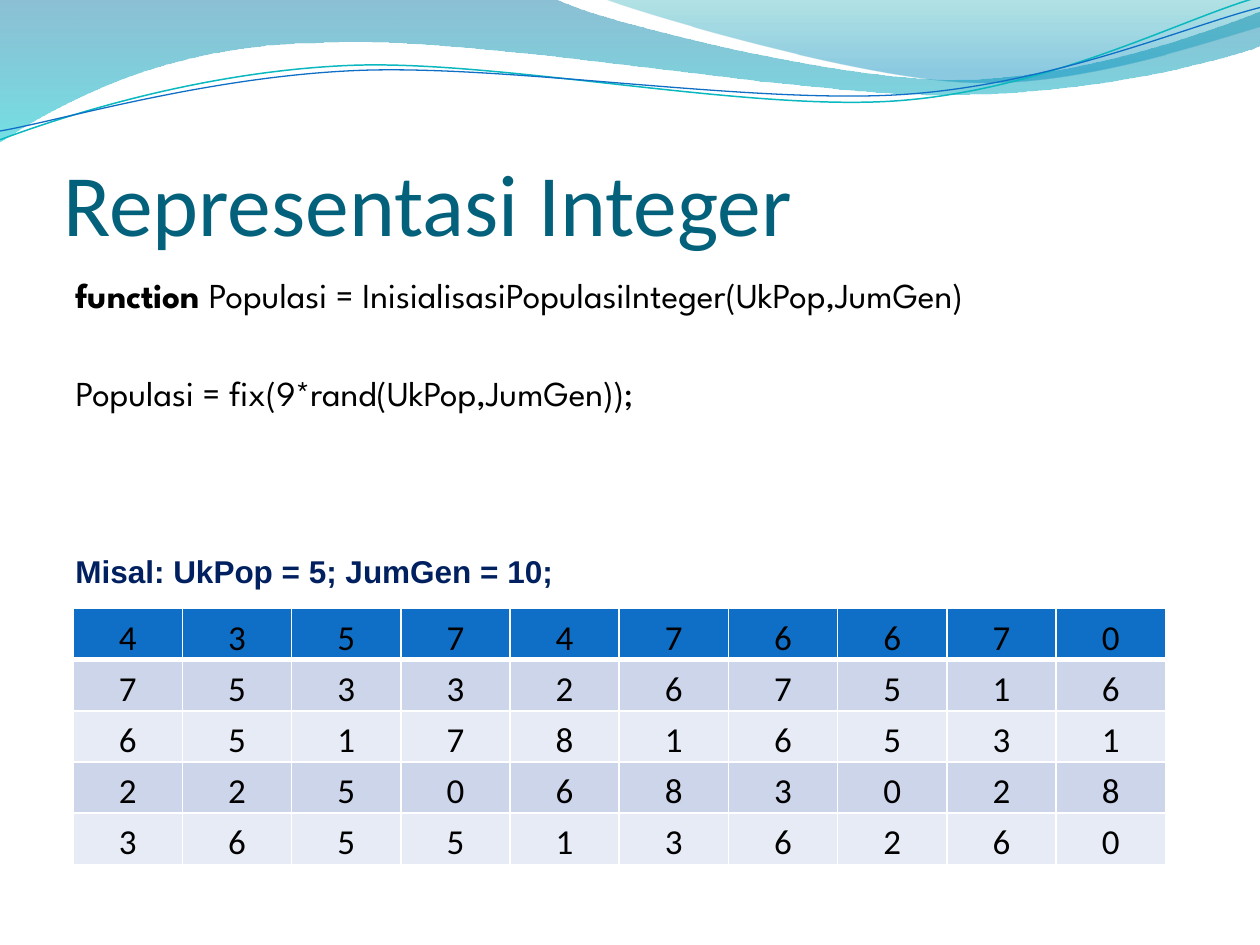
from itertools import product
from typing import NamedTuple

from lxml.etree import SubElement
from pptx import Presentation
from pptx.dml.color import RGBColor
from pptx.enum.text import MSO_ANCHOR as Anchor, MSO_AUTO_SIZE as AutoSize, PP_ALIGN as Align
from pptx.oxml import parse_xml
from pptx.oxml.ns import nsdecls, qn
from pptx.util import Inches, Pt

Point = tuple[float, float]


class Stop(NamedTuple):
    position: float
    color: str
    opacity: int


class Wave(NamedTuple):
    """A start point, then one point per straight line or three per curve."""
    start: Point
    segments: list[list[Point]]
    stops: tuple[Stop, ...] = ()
    line: str = ""
    width: float = 0


WAVES = [
    Wave((0, -0.01), [
        [(4.4, -0.01)],
        [(4.76, 0.17), (6.64, 0.63), (7.58, 0.63)],
        [(8.53, 0.63), (9.58, 0.26), (10, 0.09)],
        [(10.01, 0.36)],
        [(9.83, 0.44), (8.7, 0.76), (7.46, 0.75)],
        [(6.22, 0.75), (3.82, 0.28), (2.57, 0.34)],
        [(1.29, 0.35), (0.46, 0.83), (-0.01, 1.13)],
    ], stops=(Stop(0, "0074A1", 45), Stop(1, "00C6CF", 55))),
    Wave((4.79, -0.01), [
        [(5.09, 0.11), (6.82, 0.62), (7.69, 0.65)],
        [(8.56, 0.69), (9.61, 0.32), (10, 0.21)],
        [(10, 0)],
    ], stops=(Stop(0, "00A1A9", 30), Stop(0.8, "008BBF", 45))),
    Wave((0, 1.11), [
        [(0.48, 0.93), (1.58, 0.57), (2.77, 0.52)],
        [(3.95, 0.47), (5.93, 0.89), (7.13, 0.8)],
        [(8.33, 0.71), (9.38, 0.15), (9.98, -0.02)],
    ], line="0AB8BF", width=0.85),
    Wave((0, 1.04), [
        [(0.47, 0.96), (1.64, 0.61), (2.83, 0.56)],
        [(4.03, 0.51), (5.97, 0.83), (7.17, 0.75)],
        [(8.36, 0.67), (9.41, 0.21), (10, 0.06)],
    ], line="0F6FC6", width=0.75),
]

POPULATION = ["4357476670", "7533267516", "6517816531", "2250683028", "3655136260"]
HEADER_FILL, BAND_FILLS = "0F6FC6", ("E7EBF5", "CCD5EA")


def rgb(color: str) -> RGBColor:
    return RGBColor.from_string(color)


def set_font(font, name: str, size: float, color: str) -> None:
    font.name, font.size = name, Pt(size)
    font.color.rgb = rgb(color)


def place(shape, left: float, top: float, width: float, height: float) -> None:
    shape.left, shape.top = Inches(left), Inches(top)
    shape.width, shape.height = Inches(width), Inches(height)


def to_length(point: Point) -> tuple[int, int]:
    return Inches(point[0]), Inches(point[1])


def bend_lines(shape, segments: list[list[Point]]) -> None:
    """Join the three lines of each curved segment into one cubic curve."""
    lines = iter(list(shape.element.iter(qn("a:lnTo"))))
    for segment in segments:
        first, *others = [next(lines) for _ in segment]
        if others:
            first.addprevious(curve := parse_xml(f'<a:cubicBezTo {nsdecls("a")}/>'))
            for line in (first, *others):
                curve.append(line[0])
                line.getparent().remove(line)


def draw_wave(page, wave: Wave, depth: int) -> None:
    points = [to_length(point) for segment in wave.segments for point in segment]
    builder = page.shapes.build_freeform(*to_length(wave.start))
    builder.add_line_segments(points, close=bool(wave.stops))
    shape = builder.convert_to_shape()
    bend_lines(shape, wave.segments)
    shape.shadow.inherit = False
    if wave.stops:
        shape.line.fill.background()
        shape.fill.gradient()
        shape.fill.gradient_angle = 270
        for mark, stop in zip(shape.fill.gradient_stops, wave.stops):
            mark.position, mark.color.rgb = stop.position, rgb(stop.color)
        for node, stop in zip(shape.element.iter(qn("a:srgbClr")), wave.stops):
            SubElement(node, qn("a:alpha"), val=str(stop.opacity * 1000))
    else:
        shape.fill.background()
        shape.line.color.rgb = rgb(wave.line)
        shape.line.width = Pt(wave.width)
    # Waves lie behind the placeholders
    page.shapes.element.insert(2 + depth, shape.element)


def set_borders(cell, top: float, bottom: float) -> None:
    widths = {"lnL": 1, "lnR": 1, "lnT": top, "lnB": bottom}
    for index, (tag, width) in enumerate(widths.items()):
        cell._tc.get_or_add_tcPr().insert(index, parse_xml(
            f'<a:{tag} {nsdecls("a")} w="{Pt(width)}"><a:solidFill>'
            f'<a:srgbClr val="FFFFFF"/></a:solidFill></a:{tag}>'))


def draw_population(page, rows: list[str]) -> None:
    row_count, column_count = len(rows), len(rows[0])
    table = page.shapes.add_table(row_count, column_count, Inches(0.58), Inches(4.83),
                                  Inches(8.67), Inches(2.03)).table
    table.first_row = table.horz_banding = False
    for row, column in product(range(row_count), range(column_count)):
        cell = table.cell(row, column)
        cell.text = rows[row][column]
        cell.vertical_anchor = Anchor.BOTTOM
        cell.margin_left = cell.margin_right = cell.margin_top = Inches(0.01)
        cell.margin_bottom = 0
        cell.fill.solid()
        cell.fill.fore_color.rgb = rgb(BAND_FILLS[row % 2] if row else HEADER_FILL)
        set_borders(cell, top=3 if row == 1 else 1, bottom=3 if row == 0 else 1)
        para = cell.text_frame.paragraphs[0]
        para.alignment = Align.CENTER
        set_font(para.font, "Calibri", 20, "000000")


def write_title(title) -> None:
    place(title, 0.5, 0.77, 9, 1.25)
    frame = title.text_frame
    frame.text = "Representasi Integer"
    frame.auto_size, frame.vertical_anchor = AutoSize.NONE, Anchor.BOTTOM
    frame.margin_left = frame.margin_right = frame.margin_bottom = 0
    para = frame.paragraphs[0]
    para.alignment = Align.LEFT
    set_font(para.font, "Calibri", 50, "04617B")


def write_code(body) -> None:
    place(body, 0.5, 2.12, 9, 4.8)
    frame = body.text_frame
    frame.auto_size = AutoSize.NONE
    signature, statement = frame.paragraphs[0], frame.add_paragraph()
    keyword = signature.add_run()
    keyword.text, keyword.font.bold = "function", True
    signature.add_run().text = " Populasi = InisialisasiPopulasiInteger(UkPop,JumGen)"
    statement.text = "Populasi = fix(9*rand(UkPop,JumGen));"
    for para, gap in ((signature, 3.5), (statement, 32)):
        para.space_before = Pt(gap)
        set_font(para.font, "League Spartan", 20, "000000")
        # Hanging indent without a bullet
        properties = para._p.get_or_add_pPr()
        properties.set("marL", str(Inches(0.3)))
        properties.set("indent", str(Inches(-0.3)))
        properties.insert_element_before(
            parse_xml(f'<a:buNone {nsdecls("a")}/>'), "a:tabLst", "a:defRPr", "a:extLst")


def write_example(page) -> None:
    box = page.shapes.add_textbox(Inches(0.5), Inches(4.33), Inches(4.03), Inches(0.4))
    box.text_frame.word_wrap = False
    para = box.text_frame.paragraphs[0]
    para.text = "Misal: UkPop = 5; JumGen = 10;"
    set_font(para.font, "Arial", 18, "002060")
    para.font.bold = True


def main() -> None:
    deck = Presentation()
    deck.slide_width, deck.slide_height = Inches(10), Inches(7.5)
    page = deck.slides.add_slide(deck.slide_layouts[1])
    for depth, wave in enumerate(WAVES):
        draw_wave(page, wave, depth)
    write_title(page.shapes.title)
    write_code(page.placeholders[1])
    draw_population(page, POPULATION)
    write_example(page)
    deck.save("out.pptx")


if __name__ == "__main__":
    main()
